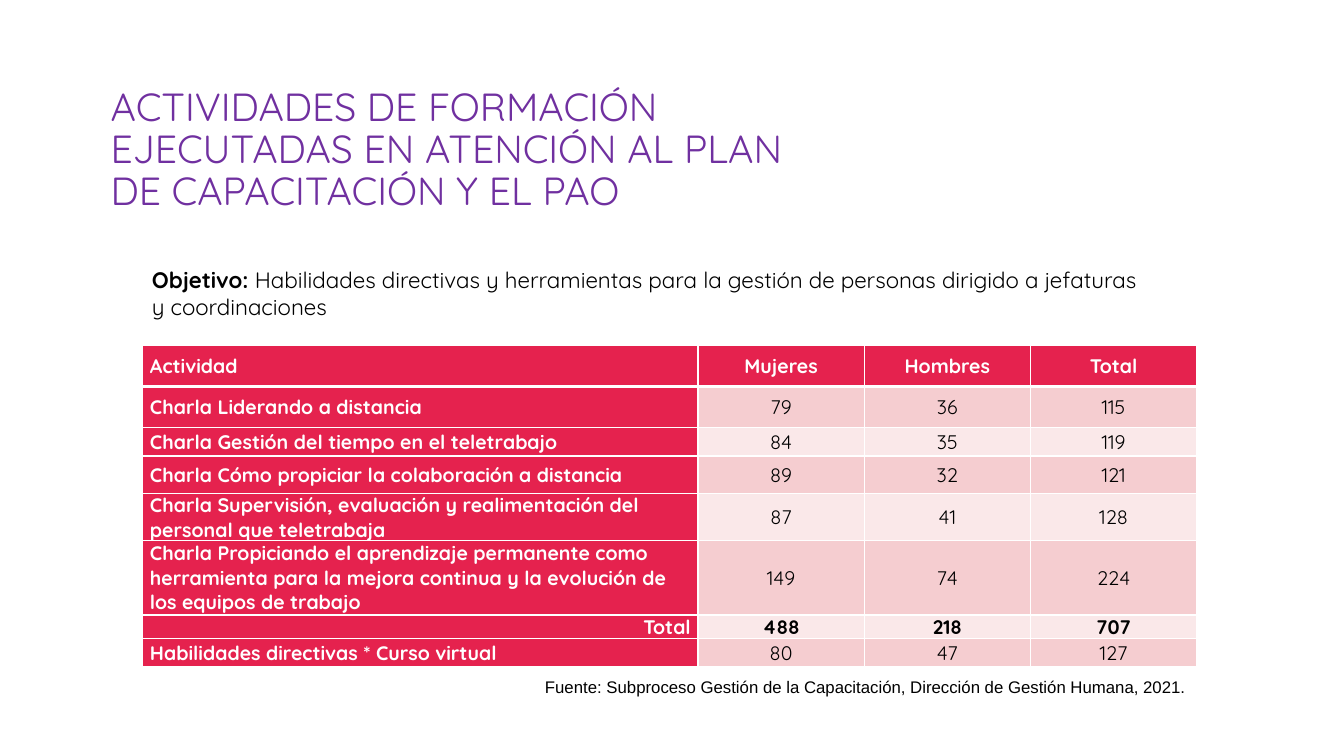
from lxml.etree import SubElement
from pptx import Presentation
from pptx.dml.color import RGBColor
from pptx.enum.text import MSO_ANCHOR as ANCHOR, PP_ALIGN as ALIGN
from pptx.oxml.ns import qn
from pptx.util import Cm, Pt

RED, PINK, PALE = "E5224E", "F5CDD0", "FAE8E9"
WHITE, BLACK, PURPLE = "FFFFFF", "000000", "7030A0"

HEADER = ("Actividad", "Mujeres", "Hombres", "Total")
ACTIVITIES = [
    ("Charla Liderando a distancia", 79, 36, 115),
    ("Charla Gestión del tiempo en el teletrabajo", 84, 35, 119),
    ("Charla Cómo propiciar la colaboración a distancia", 89, 32, 121),
    ("Charla Supervisión, evaluación y realimentación del personal que teletrabaja", 87, 41, 128),
    ("Charla Propiciando el aprendizaje permanente como herramienta para la mejora "
     "continua y la evolución de los equipos de trabajo", 149, 74, 224),
    ("Total", 488, 218, 707),
    ("Habilidades directivas * Curso virtual", 80, 47, 127),
]
COL_WIDTHS = (13.99, 4.19, 4.19, 4.19)
ROW_HEIGHTS = (1.04, 1.04, 0.71, 0.94, 1.07, 1.88, 0.48, 0.71)


def rgb(value):
    return RGBColor.from_string(value)


def add_text(p, text, size=14, font="Quicksand", color=BLACK, bold=False, align=ALIGN.LEFT):
    p.alignment = align
    r = p.add_run()
    r.text = text
    r.font.size = Pt(size)
    r.font.name = font
    r.font.color.rgb = rgb(color)
    r.font.bold = bold


def add_box(s, left, top, width, height, anchor=ANCHOR.TOP):
    tf = s.shapes.add_textbox(Cm(left), Cm(top), Cm(width), Cm(height)).text_frame
    tf.word_wrap = True
    tf.vertical_anchor = anchor
    return tf.paragraphs[0]


def add_border(cell, side, width):
    ln = SubElement(cell._tc.get_or_add_tcPr(), qn(f"a:ln{side}"), w=str(Pt(width)))
    fill = SubElement(ln, qn("a:solidFill"))
    SubElement(fill, qn("a:srgbClr"), val=WHITE)


def style_cell(cell, row, col, value):
    is_red = row == 0 or col == 0
    is_total = value == "Total" and row > 0
    in_total_row = ACTIVITIES[row - 1][0] == "Total" and row > 0
    cell.margin_left = cell.margin_right = Cm(0.18)
    cell.margin_top = cell.margin_bottom = 0
    cell.vertical_anchor = ANCHOR.MIDDLE
    for side in "LRTB":
        under_header = (row, side) in ((0, "B"), (1, "T"))
        add_border(cell, side, 3 if under_header else 1)
    cell.fill.solid()
    cell.fill.fore_color.rgb = rgb(RED if is_red else PINK if row % 2 else PALE)
    align = ALIGN.CENTER if col else ALIGN.RIGHT if is_total else ALIGN.LEFT
    add_text(cell.text_frame.paragraphs[0], str(value), color=WHITE if is_red else BLACK,
             bold=is_red or in_total_row, align=align)


def add_title(s, left, top, width, height):
    p = add_box(s, left, top, width, height, ANCHOR.MIDDLE)
    p.line_spacing = 0.9
    add_text(p, "ACTIVIDADES DE FORMACIÓN EJECUTADAS EN ATENCIÓN AL PLAN DE CAPACITACIÓN Y EL PAO",
             size=28, color=PURPLE)


def add_objective(s, left, top, width, height):
    p = add_box(s, left, top, width, height)
    add_text(p, "Objetivo: ", size=16, bold=True)
    add_text(p, "Habilidades directivas y herramientas para la gestión de personas "
             "dirigido a jefaturas y coordinaciones", size=16)


def add_activities(s, left, top):
    rows = [HEADER, *ACTIVITIES]
    table = s.shapes.add_table(len(rows), len(HEADER), Cm(left), Cm(top),
                               Cm(sum(COL_WIDTHS)), Cm(sum(ROW_HEIGHTS))).table
    for column, width in zip(table.columns, COL_WIDTHS):
        column.width = Cm(width)
    for i, (values, height) in enumerate(zip(rows, ROW_HEIGHTS)):
        table.rows[i].height = Cm(height)
        for j, value in enumerate(values):
            style_cell(table.cell(i, j), i, j, value)


def add_source_note(s, left, top, width, height):
    add_text(add_box(s, left, top, width, height),
             "Fuente: Subproceso Gestión de la Capacitación, Dirección de Gestión Humana, 2021.",
             size=12, font="Arial", align=ALIGN.RIGHT)


def main():
    prs = Presentation()
    prs.slide_width, prs.slide_height = Cm(33.87), Cm(19.05)
    s = prs.slides.add_slide(prs.slide_layouts[6])
    add_title(s, 2.54, 2.01, 17.6, 3.58)
    add_objective(s, 3.58, 6.58, 25.6, 1.63)
    add_activities(s, 3.6, 8.7)
    add_source_note(s, 13.46, 16.92, 16.69, 0.76)
    prs.save("out.pptx")


if __name__ == "__main__":
    main()
